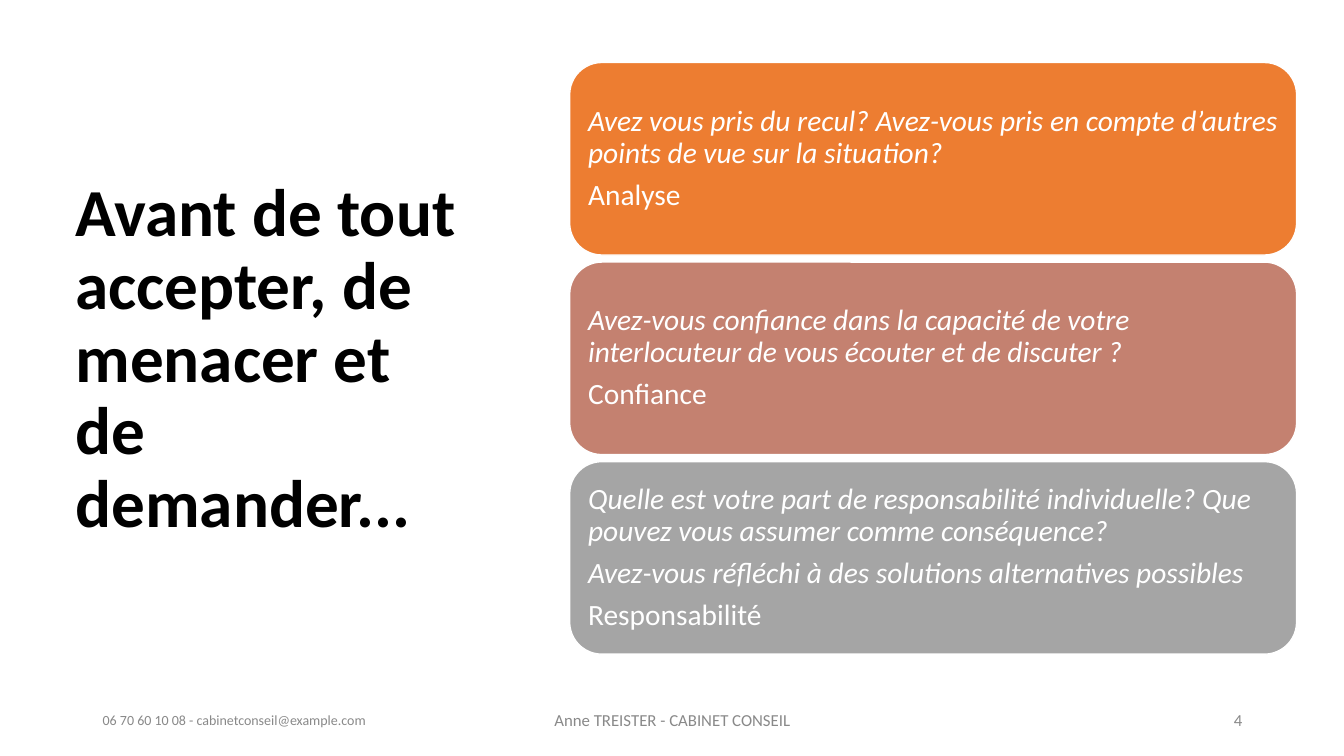
"""Build the slide of questions to ask before accepting, threatening or demanding."""
from dataclasses import dataclass

from pptx import Presentation
from pptx.dml.color import RGBColor
from pptx.enum.shapes import MSO_SHAPE
from pptx.enum.text import MSO_ANCHOR, PP_ALIGN
from pptx.util import Inches, Pt

ROUNDED = MSO_SHAPE.ROUNDED_RECTANGLE
MIDDLE = MSO_ANCHOR.MIDDLE
LEFT, CENTER, RIGHT = PP_ALIGN.LEFT, PP_ALIGN.CENTER, PP_ALIGN.RIGHT


@dataclass(frozen=True)
class Theme:
    """Hold the font, colours and type sizes."""
    font: str = "Calibri"
    title_color: str = "000000"
    footer_color: str = "898989"
    card_text: str = "FFFFFF"
    card_line: str = "FFFFFF"
    analysis: str = "ED7D31"
    trust: str = "C48170"
    responsibility: str = "A5A5A5"
    title_size: int = 48
    card_size: int = 21
    footer_size: int = 12
    contact_size: int = 10


THEME = Theme()
SLIDE_SIZE = (13.33, 7.5)
TITLE_BOX = (0.65, 0.7, 4.16, 5.75)
FOOTER_TOP, FOOTER_HEIGHT = 6.95, 0.4
CARD_LEFT, CARD_TOP, CARD_WIDTH, CARD_HEIGHT = 5.65, 0.62, 7.21, 1.91
CARD_PITCH = 1.98
CARD_INSET = 0.09

TITLE = "Avant de tout accepter, de menacer et de demander..."
CARDS = [
    (THEME.analysis, "Analyse", [
        "Avez vous pris du recul? Avez-vous pris en compte d’autres points de vue sur la situation?",
    ]),
    (THEME.trust, "Confiance", [
        "Avez-vous confiance dans la capacité de votre interlocuteur de vous écouter et de discuter ?",
    ]),
    (THEME.responsibility, "Responsabilité", [
        "Quelle est votre part de responsabilité individuelle? Que pouvez vous assumer comme conséquence?",
        "Avez-vous réfléchi à des solutions alternatives possibles",
    ]),
]
FOOTERS = [
    (0.92, 3, "06 70 60 10 08 - cabinetconseil@example.com", THEME.contact_size, LEFT),
    (4.42, 4.5, "Anne TREISTER - CABINET CONSEIL", THEME.footer_size, CENTER),
    (9.42, 3, "4", THEME.footer_size, RIGHT),
]


def style_paragraph(paragraph, text, size, color, alignment=LEFT, bold=False, italic=False):
    """Write the text of a paragraph and set its type."""
    paragraph.text = text
    paragraph.alignment = alignment
    paragraph.line_spacing = 0.9
    font = paragraph.font
    font.name, font.size = THEME.font, Pt(size)
    font.bold, font.italic = bold, italic
    font.color.rgb = RGBColor.from_string(color)


def add_text(slide, box, text, size, color, alignment=LEFT, bold=False):
    """Add a wrapped, vertically centred text box."""
    frame = slide.shapes.add_textbox(*map(Inches, box)).text_frame
    frame.word_wrap = True
    frame.vertical_anchor = MIDDLE
    style_paragraph(frame.paragraphs[0], text, size, color, alignment, bold)


def add_card(slide, row, color, topic, questions):
    """Add a rounded card with italic questions above their topic."""
    box = (CARD_LEFT, CARD_TOP + row * CARD_PITCH, CARD_WIDTH, CARD_HEIGHT)
    shape = slide.shapes.add_shape(ROUNDED, *map(Inches, box))
    shape.shadow.inherit = False
    shape.fill.solid()
    shape.fill.fore_color.rgb = RGBColor.from_string(color)
    shape.line.color.rgb = RGBColor.from_string(THEME.card_line)
    shape.line.width = Pt(1)
    frame = shape.text_frame
    frame.word_wrap = True
    frame.vertical_anchor = MIDDLE
    frame.margin_left = frame.margin_right = Inches(CARD_INSET)
    frame.margin_top = frame.margin_bottom = Inches(CARD_INSET)
    for index, text in enumerate([*questions, topic]):
        paragraph = frame.add_paragraph() if index else frame.paragraphs[0]
        style_paragraph(paragraph, text, THEME.card_size, THEME.card_text,
                        italic=index < len(questions))
        paragraph.space_after = Pt(0.35 * THEME.card_size)


def main():
    """Build and save the slide."""
    presentation = Presentation()
    presentation.slide_width, presentation.slide_height = map(Inches, SLIDE_SIZE)
    slide = presentation.slides.add_slide(presentation.slide_layouts[6])
    add_text(slide, TITLE_BOX, TITLE, THEME.title_size, THEME.title_color, bold=True)
    for left, width, text, size, alignment in FOOTERS:
        add_text(slide, (left, FOOTER_TOP, width, FOOTER_HEIGHT), text, size,
                 THEME.footer_color, alignment)
    for row, card in enumerate(CARDS):
        add_card(slide, row, *card)
    presentation.save("out.pptx")


if __name__ == "__main__":
    main()
